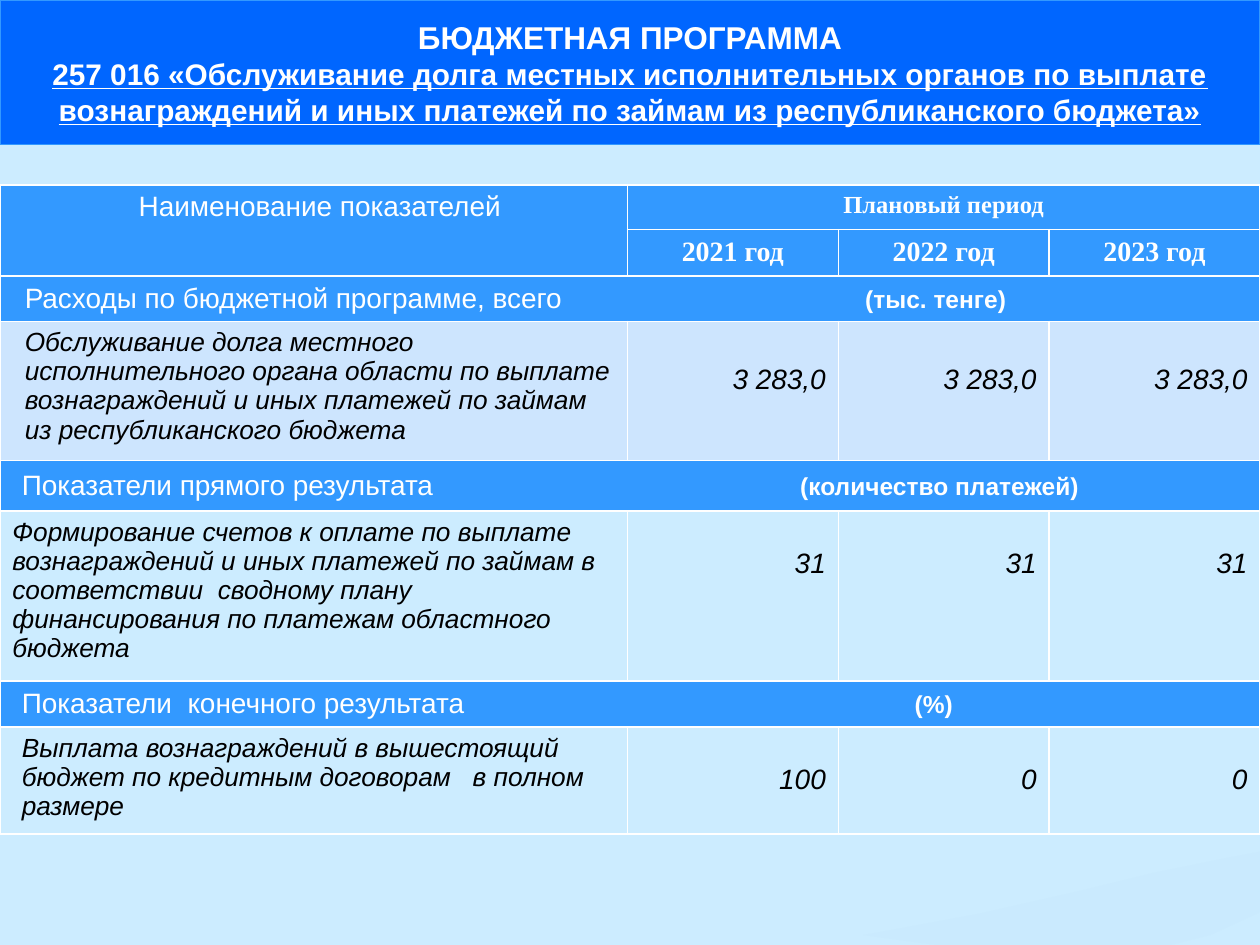
from lxml import etree
from pptx import Presentation
from pptx.dml.color import RGBColor
from pptx.enum import text
from pptx.oxml import ns
from pptx.util import Cm, Pt

SKY = RGBColor(0xCC, 0xEC, 0xFF)
BLUE = RGBColor(0x00, 0x66, 0xFF)
HEADER = RGBColor(0x33, 0x99, 0xFF)
PALE = RGBColor(0xCD, 0xE5, 0xFE)
WAVE = RGBColor(0xC6, 0xE7, 0xFC)
WHITE = RGBColor(0xFF, 0xFF, 0xFF)
BLACK = RGBColor(0, 0, 0)

LEFT, CENTER, RIGHT = (text.PP_ALIGN.LEFT, text.PP_ALIGN.CENTER,
                       text.PP_ALIGN.RIGHT)
TOP, MIDDLE = text.MSO_ANCHOR.TOP, text.MSO_ANCHOR.MIDDLE

# Text formats
HEAD = dict(name="Arial", size=Pt(16), bold=False)
PERIOD = dict(name="Times New Roman", size=Pt(14), bold=True)
YEAR = dict(PERIOD, size=Pt(16))
UNIT = dict(name="Arial", size=Pt(14), bold=True)
ITEM = dict(name="Arial", size=Pt(15), bold=False, italic=True)
VALUE = dict(ITEM, size=Pt(16))
TITLE = dict(name="Arial", size=Pt(18), bold=True)
SUBTITLE = dict(TITLE, size=Pt(17), underline=True)

COLUMNS = [12.65, 4.25, 4.25, 4.25]
ROWS = [0.9, 0.93, 0.92, 2.8, 1.02, 3.43, 0.93, 2.15]
YEARS = ["2021 год", "2022 год", "2023 год"]

# Section name, left inset, unit, unit position; item, its inset, values
# and their top inset, item fill
SECTIONS = [
    ("Расходы по бюджетной программе, всего", 0.5, "(тыс. тенге)", 17.44,
     "Обслуживание долга местного исполнительного органа области по выплате "
     "вознаграждений и иных платежей по займам из республиканского бюджета",
     0.5, ["3 283,0"] * 3, 0.86, PALE),
    ("Показатели прямого результата", 0.44, "(количество платежей)", 16.13,
     "Формирование счетов к оплате по выплате вознаграждений и иных платежей "
     "по займам в соответствии  сводному плану финансирования по платежам "
     "областного бюджета", 0.25, ["31"] * 3, 0.75, None),
    ("Показатели  конечного результата", 0.44, "(%)", 18.44,
     "Выплата вознаграждений в вышестоящий бюджет по кредитным договорам   "
     "в полном размере", 0.44, ["100", "0", "0"], 0.75, None),
]

# Wave outline on the lower right, in cm
WAVE_POINTS = [(25.4, 17.17), (24.71, 17.3), (23.24, 17.6), (21.77, 17.96),
               (19.74, 18.42), (17.96, 18.75), (17.4, 18.85), (18.5, 19),
               (18.9, 19.05), (23.6, 19.05), (24.4, 18.85), (25.4, 18.39)]


def add_run(p, words, style, color):
    r = p.add_run()
    r.text = words
    for key, value in style.items():
        setattr(r.font, key, value)
    r.font.color.rgb = color


def add_borders(cell):
    tc_pr = cell._tc.get_or_add_tcPr()
    for i, side in enumerate(("lnL", "lnR", "lnT", "lnB")):
        ln = etree.Element(ns.qn("a:" + side), w=str(Pt(1)))
        fill = etree.SubElement(ln, ns.qn("a:solidFill"))
        etree.SubElement(fill, ns.qn("a:srgbClr"), val=str(WHITE))
        tc_pr.insert(i, ln)


def write_cell(cell, words, style, color=WHITE, align=CENTER, left=0.25,
               top=0.13, anchor=TOP):
    cell.margin_left, cell.margin_top = Cm(left), Cm(top)
    cell.vertical_anchor = anchor
    p = cell.text_frame.paragraphs[0]
    p.alignment = align
    add_run(p, words, style, color)
    return p


def add_tab(p, position):
    tabs = etree.SubElement(p._p.get_or_add_pPr(), ns.qn("a:tabLst"))
    etree.SubElement(tabs, ns.qn("a:tab"), pos=str(Cm(position)), algn="l")


def fill_section(table, row, section):
    name, left, unit, unit_x, item, item_left, values, top, color = section
    # Heading with the unit of measure at a tab stop
    head = table.cell(row, 0)
    head.merge(table.cell(row, 3))
    p = write_cell(head, name + "\t", HEAD, align=LEFT, left=left,
                   anchor=MIDDLE)
    add_tab(p, unit_x - left)
    add_run(p, unit, UNIT, WHITE)
    # Indicator and its values by year
    write_cell(table.cell(row + 1, 0), item, ITEM, BLACK, LEFT, item_left)
    for col, value in enumerate(values, 1):
        write_cell(table.cell(row + 1, col), value, VALUE, BLACK, RIGHT,
                   top=top)
    for cell in table.rows[row + 1].cells:
        if color is None:
            cell.fill.background()
        else:
            cell.fill.solid()
            cell.fill.fore_color.rgb = color


def add_indicators(slide, x, y, w, h):
    table = slide.shapes.add_table(len(ROWS), len(COLUMNS), Cm(x), Cm(y),
                                   Cm(w), Cm(h)).table
    table.first_row = table.horz_banding = False
    for col, width in zip(table.columns, COLUMNS):
        col.width = Cm(width)
    for row, height in zip(table.rows, ROWS):
        row.height = Cm(height)
    for cell in table.iter_cells():
        cell.fill.solid()
        cell.fill.fore_color.rgb = HEADER
        add_borders(cell)
    # Column headings
    table.cell(0, 0).merge(table.cell(1, 0))
    table.cell(0, 1).merge(table.cell(0, 3))
    write_cell(table.cell(0, 0), "Наименование показателей", HEAD, left=0.5)
    write_cell(table.cell(0, 1), "Плановый период", PERIOD)
    for col, year in enumerate(YEARS, 1):
        write_cell(table.cell(1, col), year, YEAR)
    for i, section in enumerate(SECTIONS):
        fill_section(table, 2 + 2 * i, section)


def add_wave(slide):
    points = [(Cm(x), Cm(y)) for x, y in WAVE_POINTS]
    builder = slide.shapes.build_freeform(*points[0])
    builder.add_line_segments(points[1:], close=True)
    sp = builder.convert_to_shape()
    sp.shadow.inherit = False
    sp.line.fill.background()
    sp.fill.solid()
    sp.fill.fore_color.rgb = WAVE
    color = sp._element.spPr.find(".//" + ns.qn("a:srgbClr"))
    etree.SubElement(color, ns.qn("a:alpha"), val="30000")


def set_banner(slide, x, y, w, h):
    sp = slide.shapes.title
    sp.left, sp.top, sp.width, sp.height = Cm(x), Cm(y), Cm(w), Cm(h)
    sp.fill.solid()
    sp.fill.fore_color.rgb = BLUE
    sp.line.color.rgb = HEADER
    sp.line.width = Pt(0.75)
    tf = sp.text_frame
    tf.word_wrap = True
    tf.auto_size = text.MSO_AUTO_SIZE.NONE
    tf.vertical_anchor = MIDDLE
    p = tf.paragraphs[0]
    p.alignment = CENTER
    add_run(p, "БЮДЖЕТНАЯ ПРОГРАММА", TITLE, WHITE)
    p.add_line_break()
    add_run(p, "257 016 «Обслуживание долга местных исполнительных органов по "
            "выплате вознаграждений и иных платежей по займам из "
            "республиканского бюджета»", SUBTITLE, WHITE)


def main():
    prs = Presentation()
    prs.slide_width, prs.slide_height = Cm(25.4), Cm(19.05)
    slide = prs.slides.add_slide(prs.slide_layouts[5])
    slide.background.fill.solid()
    slide.background.fill.fore_color.rgb = SKY
    add_indicators(slide, 0, 3.73, 25.4, sum(ROWS))
    add_wave(slide)
    set_banner(slide, 0, 0, 25.4, 2.92)
    prs.save("out.pptx")


if __name__ == "__main__":
    main()
